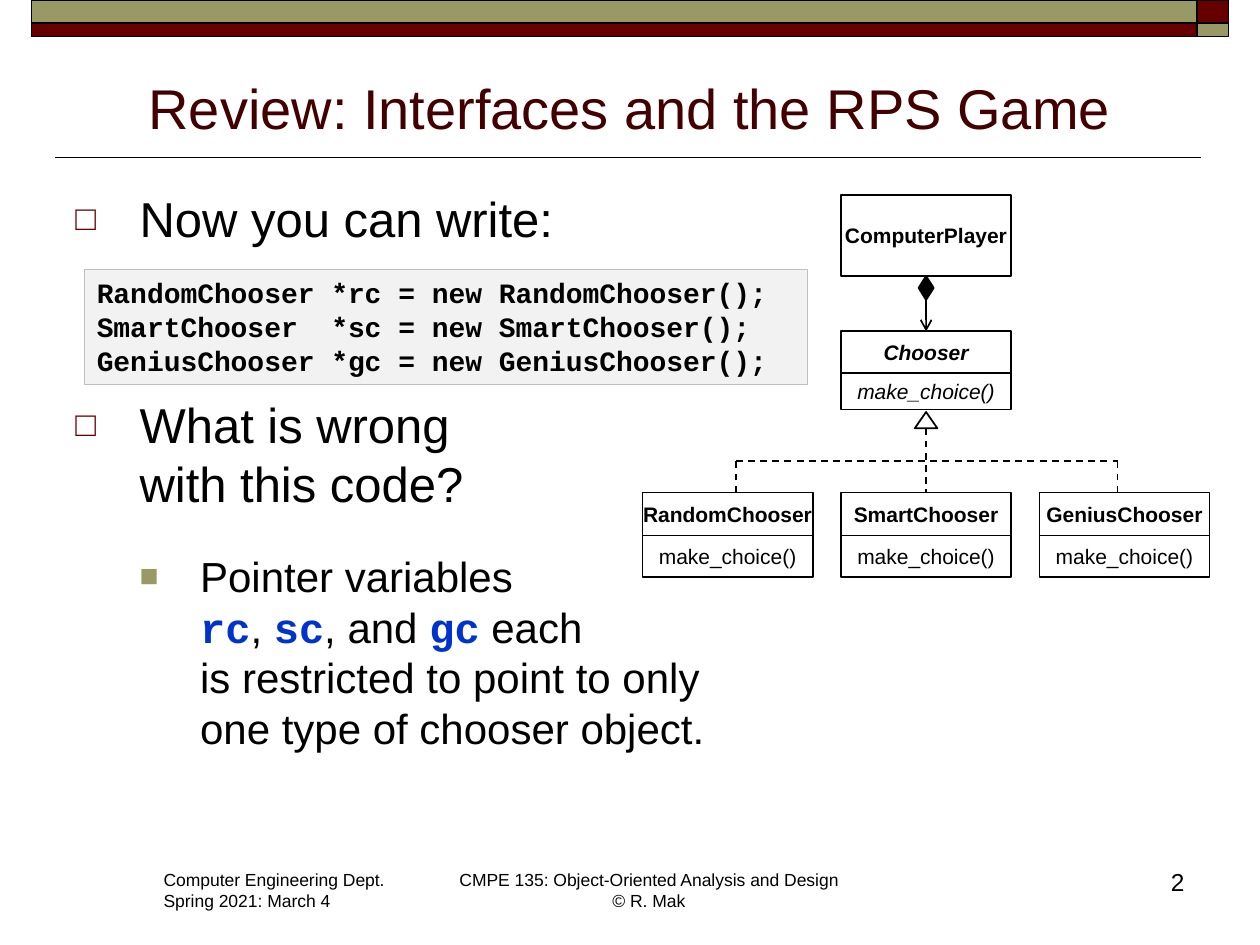
from dataclasses import dataclass

from lxml import etree
from pptx import Presentation
from pptx.dml.color import RGBColor
from pptx.enum.dml import MSO_LINE
from pptx.enum.shapes import MSO_CONNECTOR, MSO_SHAPE
from pptx.enum.text import MSO_ANCHOR, PP_ALIGN
from pptx.oxml.ns import qn
from pptx.util import Inches, Pt

RECT = MSO_SHAPE.RECTANGLE
DIAMOND = MSO_SHAPE.DIAMOND
TRIANGLE = MSO_SHAPE.ISOSCELES_TRIANGLE
STRAIGHT = MSO_CONNECTOR.STRAIGHT
DASH = MSO_LINE.DASH
LEFT, CENTER, RIGHT = PP_ALIGN.LEFT, PP_ALIGN.CENTER, PP_ALIGN.RIGHT
TOP, MIDDLE, BOTTOM = MSO_ANCHOR.TOP, MSO_ANCHOR.MIDDLE, MSO_ANCHOR.BOTTOM


@dataclass(frozen=True)
class Theme:
    font: str = "Arial"
    mono: str = "Courier New"
    black: str = "000000"
    title: str = "420000"
    maroon: str = "660000"
    olive: str = "999966"
    keyword: str = "0033CC"
    code_fill: str = "F2F2F2"
    code_line: str = "BFBFBF"
    title_size: int = 32
    body_size: int = 28
    sub_size: int = 24
    code_size: int = 16
    number_size: int = 14
    uml_size: int = 12
    footer_size: int = 10


T = Theme()


def style_font(font, size, color=T.black, **fmt):
    font.size = Pt(size)
    font.color.rgb = RGBColor.from_string(color)
    for key, value in {"name": T.font, "bold": False, "italic": False, **fmt}.items():
        setattr(font, key, value)


def add_text(p, text, size, **fmt):
    for i, part in enumerate(text.split("\n")):
        if i:
            p.add_line_break()
        if part:
            r = p.add_run()
            r.text = part
            style_font(r.font, size, **fmt)


def fill_frame(tf, lines, size, align=LEFT, anchor=TOP, wrap=False, **fmt):
    tf.word_wrap = wrap
    tf.vertical_anchor = anchor
    for i, line in enumerate(lines):
        p = tf.add_paragraph() if i else tf.paragraphs[0]
        p.alignment = align
        add_text(p, line, size, **fmt)


def add_box(s, box, shape=RECT, fill=None, line=T.black, width=1):
    sp = s.shapes.add_shape(shape, *map(Inches, box))
    sp.shadow.inherit = False
    if fill:
        sp.fill.solid()
        sp.fill.fore_color.rgb = RGBColor.from_string(fill)
    else:
        sp.fill.background()
    sp.line.color.rgb = RGBColor.from_string(line)
    sp.line.width = Pt(width)
    return sp


def add_line(s, x1, y1, x2, y2, dash=None, arrow=False):
    c = s.shapes.add_connector(STRAIGHT, *map(Inches, (x1, y1, x2, y2)))
    c.line.color.rgb = RGBColor.from_string(T.black)
    c.line.width = Pt(1)
    if dash:
        c.line.dash_style = dash
    sp_pr = c._element.spPr
    if arrow:
        etree.SubElement(sp_pr.find(qn("a:ln")), qn("a:tailEnd"), type="arrow")
    etree.SubElement(sp_pr, qn("a:effectLst"))
    return c


def add_textbox(s, box, lines, size, **fmt):
    sp = s.shapes.add_textbox(*map(Inches, box))
    fill_frame(sp.text_frame, lines, size, **fmt)


def set_bullet(p, char, color, percent, left, hanging):
    p_pr = p._p.get_or_add_pPr()
    p_pr.set("marL", str(Inches(left)))
    p_pr.set("indent", str(-Inches(hanging)))
    bu_clr = etree.SubElement(p_pr, qn("a:buClr"))
    etree.SubElement(bu_clr, qn("a:srgbClr"), val=color)
    etree.SubElement(p_pr, qn("a:buSzPct"), val=str(percent * 1000))
    etree.SubElement(p_pr, qn("a:buFont"), typeface=T.font)
    etree.SubElement(p_pr, qn("a:buChar"), char=char)


def add_banner(s, box):
    x, y, w, h = box
    corner, upper = 0.25, 0.18
    rows = ((y, upper, T.olive, T.maroon), (y + upper, h - upper, T.maroon, T.olive))
    for top, height, band, end in rows:
        add_box(s, (x, top, w - corner, height), fill=band)
        add_box(s, (x + w - corner, top, corner, height), fill=end)


def add_title(s, box, text):
    x, y, w, h = box
    title = s.shapes.title
    title.left, title.top, title.width, title.height = map(Inches, box)
    fill_frame(title.text_frame, [text], T.title_size, align=CENTER,
               anchor=BOTTOM, wrap=True, color=T.title)
    add_line(s, x - 0.06, y + h + 0.08, x + w + 0.03, y + h + 0.08)


def add_body(s, box):
    tf = s.shapes.add_textbox(*map(Inches, box)).text_frame
    tf.word_wrap = True
    main = ("□", T.maroon, 70, 0.51, 0.51)
    sub = ("■", T.olive, 75, 0.99, 0.48)
    code = {"name": T.mono, "color": T.keyword, "bold": True}
    items = (
        (main, 0, T.body_size, [("Now you can write:", {})]),
        (main, 84, T.body_size, [("What is wrong\nwith this code?", {})]),
        (sub, 22, T.sub_size, [
            ("Pointer variables\n", {}), ("rc", code), (", ", {}), ("sc", code),
            (", and ", {}), ("gc", code),
            (" each\nis restricted to point to only\none type of chooser object.", {}),
        ]),
    )
    for i, (bullet, before, size, runs) in enumerate(items):
        p = tf.add_paragraph() if i else tf.paragraphs[0]
        p.space_before = Pt(before)
        set_bullet(p, *bullet)
        for text, fmt in runs:
            add_text(p, text, size, **fmt)


def add_code(s, box, lines):
    sp = add_box(s, box, fill=T.code_fill, line=T.code_line, width=0.75)
    fill_frame(sp.text_frame, lines, T.code_size, name=T.mono, bold=True)


def add_class(s, box, name, method=None, head=0.34, abstract=False):
    x, y, w, h = box
    parts = [(name, y, head if method else h, True)]
    if method:
        parts.append((method, y + head, h - head, False))
    shapes = []
    for text, top, height, bold in parts:
        sp = add_box(s, (x, top, w, height))
        fill_frame(sp.text_frame, [text], T.uml_size, align=CENTER,
                   anchor=MIDDLE, bold=bold, italic=abstract)
        shapes.append(sp)
    return shapes[0]


def add_diagram(s, box):
    x, y, w, h = box
    class_w, class_h = 1.35, 0.67
    step = (w - class_w) / 2
    middle = x + step
    center = middle + class_w / 2
    row_y = y + h - class_h
    bus_y = row_y - 0.25
    method = "make_choice()"

    add_class(s, (middle, y, class_w, 0.64), "ComputerPlayer")
    chooser = add_class(s, (middle, y + 1.08, class_w, 0.62), "Chooser", method,
                        head=0.33, abstract=True)
    add_box(s, (center - 0.06, y + 0.64, 0.12, 0.19), DIAMOND, fill=T.black)
    c = add_line(s, center, y + 0.83, center, y + 1.08, arrow=True)
    c.end_connect(chooser, 0)

    add_box(s, (center - 0.09, y + 1.72, 0.18, 0.13), TRIANGLE)
    names = ("RandomChooser", "SmartChooser", "GeniusChooser")
    children = [add_class(s, (x + i * step, row_y, class_w, class_h), name, method)
                for i, name in enumerate(names)]
    c = add_line(s, center, y + 1.85, center, row_y, dash=DASH)
    c.end_connect(children[1], 0)
    ends = (x + 0.74, x + w - 0.73)
    for end in ends:
        add_line(s, end, row_y, end, bus_y, dash=DASH)
    add_line(s, ends[0], bus_y, ends[1], bus_y, dash=DASH)


def add_footer(s, box):
    x, y, w, h = box
    add_textbox(s, (x, y, 1.97, h),
                ["Computer Engineering Dept.", "Spring 2021: March 4"], T.footer_size)
    add_textbox(s, (x + 2.33, y, 3.24, h),
                ["CMPE 135: Object-Oriented Analysis and Design\n© R. Mak"],
                T.footer_size, align=CENTER)
    add_textbox(s, (x + w - 0.6, y - 0.02, 0.6, 0.5), ["2"], T.number_size,
                align=RIGHT, wrap=True)


def main():
    prs = Presentation()
    prs.slide_width, prs.slide_height = Inches(10), Inches(7.5)
    s = prs.slides.add_slide(prs.slide_layouts[5])
    add_banner(s, (0.25, 0, 9.5, 0.29))
    add_title(s, (0.5, 0.45, 9, 0.72), "Review: Interfaces and the RPS Game")
    add_body(s, (0.5, 1.45, 9, 5.25))
    add_code(s, (0.67, 2.14, 5.74, 0.91), [
        "RandomChooser *rc = new RandomChooser();",
        "SmartChooser  *sc = new SmartChooser();",
        "GeniusChooser *gc = new GeniusChooser();",
    ])
    add_diagram(s, (5.1, 1.55, 4.5, 3.03))
    add_footer(s, (1.2, 6.85, 8.3, 0.44))
    prs.save("out.pptx")


if __name__ == "__main__":
    main()
